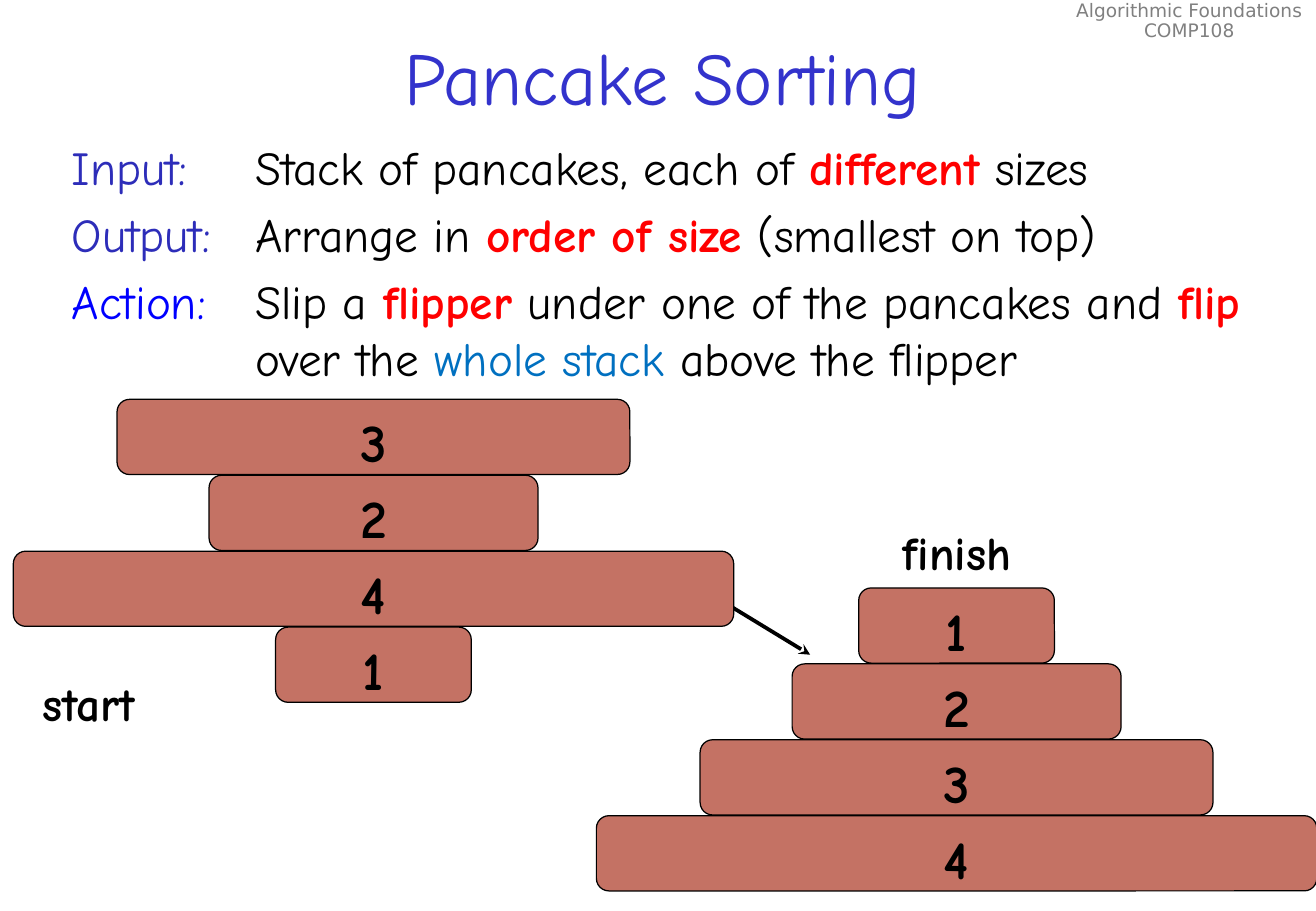
from pptx import Presentation
from pptx import util as u
from pptx.dml import color
from pptx.enum import shapes, text
from pptx.oxml import ns
from lxml import etree

FONT = "Comic Neue"
BLACK, RED, SKY = "000000", "FF0000", "0070C0"
INDIGO, BLUE, TITLE_BLUE, GREY = "2D2DB9", "0000FF", "3333CC", "808080"
PANCAKE = "C47264"

# Content: each paragraph is a list of (text, colour, bold)
TITLE = "Pancake Sorting"
HEADER = ["Algorithmic Foundations", "COMP108"]
RULES = [
    [("Input:\t", INDIGO, False), ("Stack of pancakes, each of ", BLACK, False),
     ("different", RED, True), (" sizes", BLACK, False)],
    [("Output:\t", INDIGO, False), ("Arrange in ", BLACK, False),
     ("order of size", RED, True), (" (smallest on top)", BLACK, False)],
    [("Action:", BLUE, False), ("\tSlip a ", BLACK, False),
     ("flipper", RED, True), (" under one of the pancakes and ", BLACK, False),
     ("flip", RED, True), (" over the ", BLACK, False),
     ("whole stack ", SKY, False), ("above the flipper", BLACK, False)],
]
# Stacks: sizes from top to bottom, centre x, top y
STACKS = [([1, 2, 3, 4], 567, 348.5), ([3, 2, 4, 1], 221.4, 236.7)]
WIDTHS = {1: 116, 2: 195, 3: 304, 4: 427}
HEIGHT, PITCH = 44.6, 45
# Labels: text, left, top, width, height
LABELS = [("finish", 527.8, 306.7, 89.3, 41), ("start", 18, 396, 83.5, 41)]


def rgb(value):
    return color.RGBColor.from_string(value)


def place(item, left, top, width, height):
    item.left, item.top = u.Pt(left), u.Pt(top)
    item.width, item.height = u.Pt(width), u.Pt(height)


def write(para, words, size=28, fill=BLACK, bold=False, font=FONT, align=None):
    span = para.add_run()
    span.text = words
    span.font.size, span.font.name, span.font.bold = u.Pt(size), font, bold
    span.font.color.rgb = rgb(fill)
    if align is not None:
        para.alignment = align


def add_label(page, left, top, width, height):
    box = page.shapes.add_textbox(*map(u.Pt, (left, top, width, height)))
    box.text_frame.word_wrap = False
    return box.text_frame


def add_pancake(page, number, centre, top):
    width = WIDTHS[number]
    pancake = page.shapes.add_shape(
        shapes.MSO_SHAPE.ROUNDED_RECTANGLE,
        *map(u.Pt, (centre - width / 2, top, width, HEIGHT)))
    pancake.shadow.inherit = False
    pancake.fill.solid()
    pancake.fill.fore_color.rgb = rgb(PANCAKE)
    pancake.line.color.rgb = rgb(BLACK)
    pancake.line.width = u.Pt(0.75)
    frame = pancake.text_frame
    frame.word_wrap = False
    frame.vertical_anchor = text.MSO_ANCHOR.TOP
    write(frame.paragraphs[0], str(number), size=32, bold=True,
          align=text.PP_ALIGN.CENTER)


deck = Presentation()
deck.slide_width, deck.slide_height = u.Pt(780), u.Pt(540)
page = deck.slides.add_slide(deck.slide_layouts[1])
title, body = page.placeholders

# Course header
header = add_label(page, 630, -2.9, 149.8, 31)
for index, words in enumerate(HEADER):
    para = header.add_paragraph() if index else header.paragraphs[0]
    para.line_spacing = 0.9
    write(para, words, size=11, fill=GREY, font="DejaVu Sans",
          align=text.PP_ALIGN.CENTER)

# Title
place(title, 6.5, 0, 773.3, 90)
title.text_frame.vertical_anchor = text.MSO_ANCHOR.MIDDLE
write(title.text_frame.paragraphs[0], TITLE, size=44, fill=TITLE_BLUE,
      align=text.PP_ALIGN.CENTER)

# Rules with hanging indents
place(body, 35.3, 78.5, 738.7, 154.8)
body.text_frame.auto_size = text.MSO_AUTO_SIZE.NONE
for index, parts in enumerate(RULES):
    para = body.text_frame.add_paragraph() if index else body.text_frame.paragraphs[0]
    para.space_before = u.Pt(6)
    props = para._p.get_or_add_pPr()
    props.set("marL", str(u.Pt(108.7)))
    props.set("indent", str(u.Pt(-108.7)))
    etree.SubElement(props, ns.qn("a:buNone"))
    for words, fill, bold in parts:
        write(para, words, fill=fill, bold=bold)

# Arrow from start to finish, behind the pancakes
arrow = page.shapes.add_connector(
    shapes.MSO_CONNECTOR.STRAIGHT, *map(u.Pt, (406.8, 343.4, 480.2, 388.1)))
arrow.line.color.rgb = rgb(BLACK)
arrow.line.width = u.Pt(2.25)
etree.SubElement(arrow.line._get_or_add_ln(), ns.qn("a:tailEnd"), type="stealth")
etree.SubElement(arrow._element.spPr, ns.qn("a:effectLst"))

# Pancake stacks
for sizes, centre, top in STACKS:
    for row, number in enumerate(sizes):
        add_pancake(page, number, centre, top + row * PITCH)

# Stack labels
for words, *area in LABELS:
    write(add_label(page, *area).paragraphs[0], words, bold=True)

deck.save("out.pptx")
